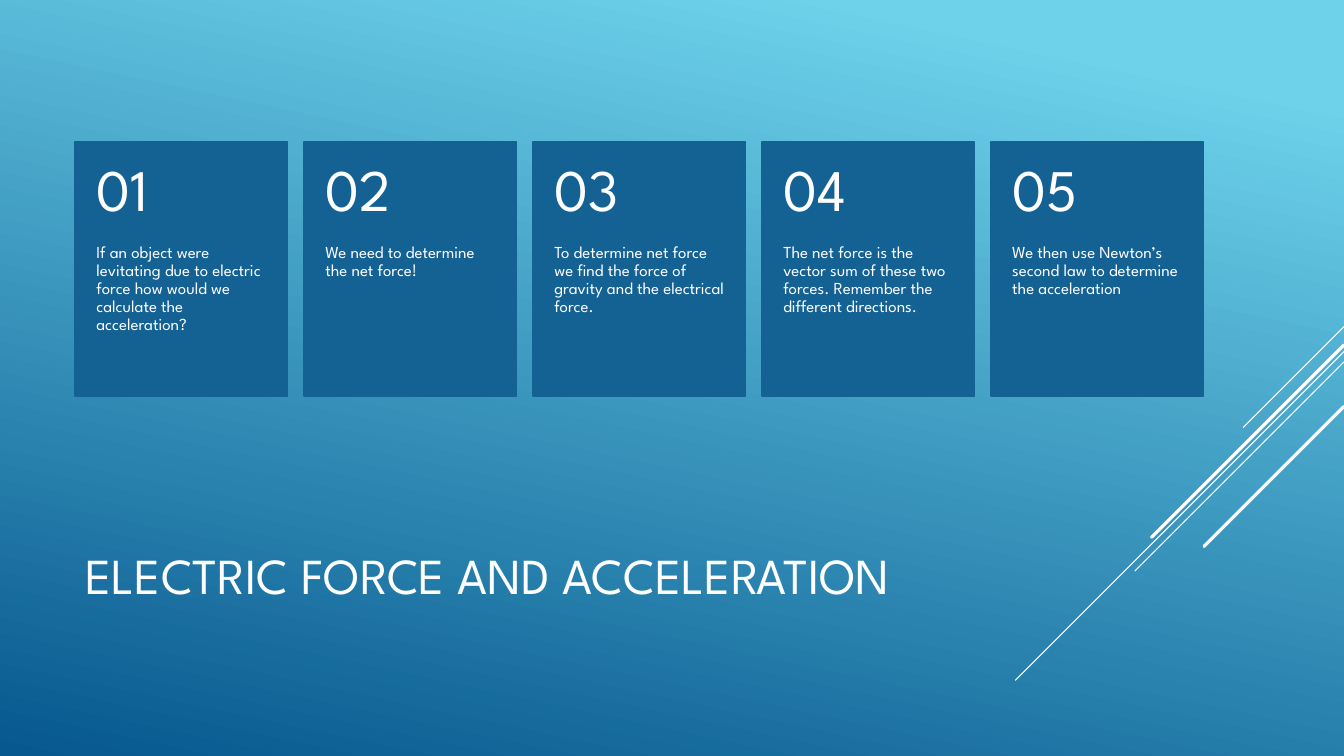
from lxml.etree import SubElement
from pptx import Presentation
from pptx.dml.color import RGBColor
from pptx.enum.shapes import MSO_CONNECTOR, MSO_SHAPE
from pptx.enum.text import MSO_ANCHOR, MSO_AUTO_SIZE, PP_ALIGN
from pptx.oxml.ns import qn
from pptx.util import Cm, Pt

TITLE = "ELECTRIC FORCE AND ACCELERATION"
STEPS = [
    "If an object were levitating due to electric force how would we calculate the acceleration?",
    "We need to determine the net force!",
    "To determine net force we find the force of gravity and the electrical force.",
    "The net force is the vector sum of these two forces. Remember the different directions.",
    "We then use Newton’s second law to determine the acceleration",
]
DIAGONALS = [
    {"top": 8.23, "reach": 2.54, "weight": 0.75},
    {"top": 8.86, "reach": 8.28, "weight": 0.75},
    {"top": 9.12, "reach": 5.27, "weight": 0.75},
    {"top": 8.69, "reach": 4.85, "weight": 2.25},
    {"top": 10.24, "reach": 3.53, "weight": 2.25},
]
COLORS = {"sky": "6ED2EB", "deep": "06588E", "card": "146194", "white": "FFFFFF"}
FONT = "League Spartan"
SLIDE_WIDTH, SLIDE_HEIGHT = 33.87, 19.05
MARGIN = 1.9
CARD_TOP, CARD_WIDTH, CARD_HEIGHT, CARD_PITCH = 3.58, 5.35, 6.4, 5.77
NUMBER_HEIGHT = 2.56
INSET = 0.53


def color(name):
    return RGBColor.from_string(COLORS[name])


def write(shape, text, size, anchor, insets=(0.25, 0.13, 0.25, 0.13)):
    frame = shape.text_frame
    frame.text = text
    frame.word_wrap = True
    frame.auto_size = MSO_AUTO_SIZE.NONE
    frame.vertical_anchor = anchor
    frame.margin_left, frame.margin_top, frame.margin_right, frame.margin_bottom = map(Cm, insets)
    paragraph = frame.paragraphs[0]
    paragraph.alignment = PP_ALIGN.LEFT
    paragraph.line_spacing = 0.9
    font = paragraph.runs[0].font
    font.name, font.size = FONT, Pt(size)
    font.color.rgb = color("white")


def paint_background(slide):
    fill = slide.background.fill
    fill.gradient()
    fill.gradient_angle = 360 - 102
    for stop, name, position in zip(fill.gradient_stops, ("sky", "deep"), (0.1, 1)):
        stop.color.rgb = color(name)
        stop.position = position


def add_diagonal(group, top, reach, weight):
    line = group.shapes.add_connector(
        MSO_CONNECTOR.STRAIGHT,
        Cm(SLIDE_WIDTH), Cm(top), Cm(SLIDE_WIDTH - reach), Cm(top + reach))
    line.line.color.rgb = color("white")
    line.line.width = Pt(weight)
    line.line._get_or_add_ln().set("cap", "rnd")
    SubElement(line._element.spPr, qn("a:effectLst"))


def add_card(group, index, text):
    left = Cm(MARGIN + index * CARD_PITCH)
    width = Cm(CARD_WIDTH)
    card = group.shapes.add_shape(
        MSO_SHAPE.RECTANGLE, left, Cm(CARD_TOP), width, Cm(CARD_HEIGHT))
    card.shadow.inherit = False
    card.fill.solid()
    card.fill.fore_color.rgb = color("card")
    card.line.color.rgb = color("card")
    card.line.width = Pt(1.25)
    body = group.shapes.add_textbox(
        left, Cm(CARD_TOP + NUMBER_HEIGHT), width, Cm(CARD_HEIGHT - NUMBER_HEIGHT))
    write(body, text, 12, MSO_ANCHOR.TOP, (INSET, 0, INSET, 0.91))
    number = group.shapes.add_textbox(left, Cm(CARD_TOP), width, Cm(NUMBER_HEIGHT))
    write(number, f"{index + 1:02}", 42, MSO_ANCHOR.MIDDLE, (INSET, 0.46, INSET, 0.46))


def main():
    presentation = Presentation()
    presentation.slide_width, presentation.slide_height = Cm(SLIDE_WIDTH), Cm(SLIDE_HEIGHT)
    slide = presentation.slides.add_slide(presentation.slide_layouts[5])
    paint_background(slide)

    title = slide.shapes.title
    title.left, title.top, title.width, title.height = Cm(MARGIN), Cm(12.47), Cm(23.7), Cm(4.19)
    write(title, TITLE, 36, MSO_ANCHOR.MIDDLE)

    diagonals = slide.shapes.add_group_shape()
    for diagonal in DIAGONALS:
        add_diagonal(diagonals, **diagonal)

    cards = slide.shapes.add_group_shape()
    for index, text in enumerate(STEPS):
        add_card(cards, index, text)

    presentation.save("out.pptx")


if __name__ == "__main__":
    main()
